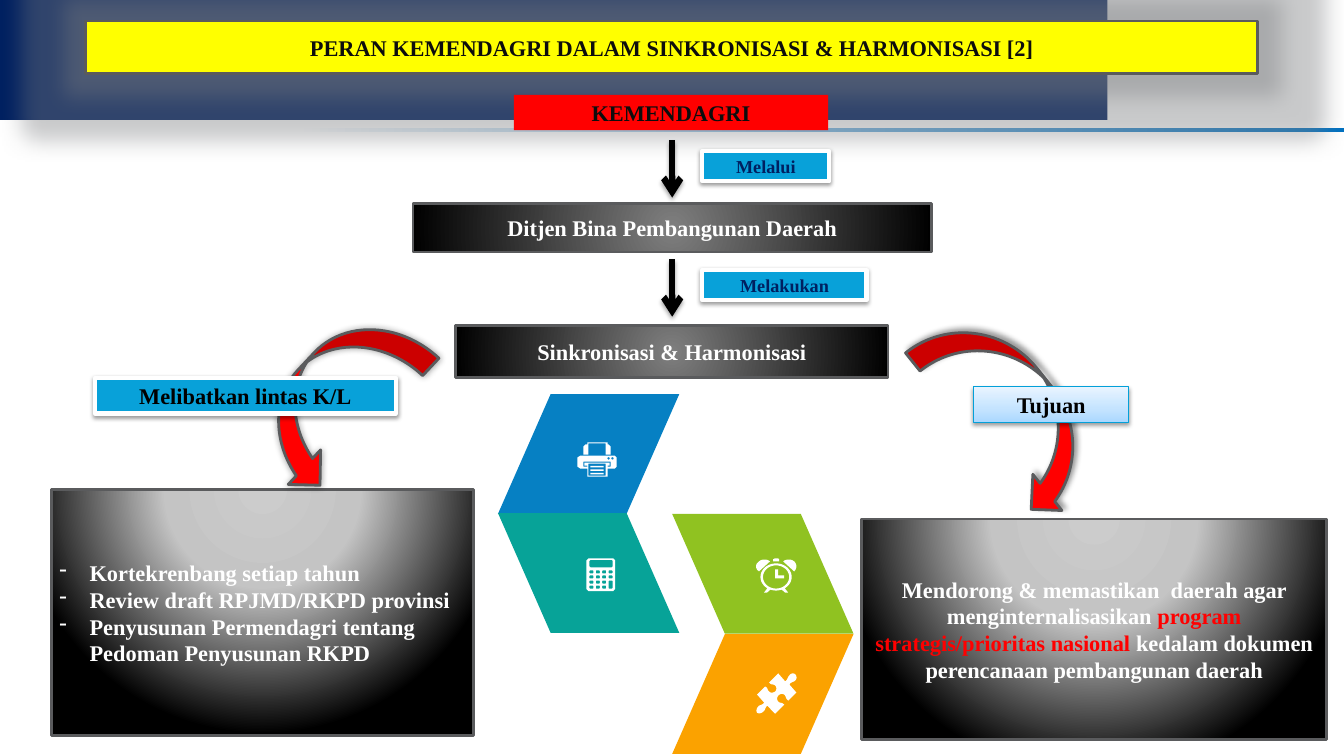
import math

import lxml.etree
import pptx
import pptx.dml.color
import pptx.enum.dml
import pptx.enum.shapes
import pptx.enum.text
import pptx.oxml
import pptx.oxml.ns
import pptx.util

Cm = pptx.util.Cm
Pt = pptx.util.Pt
RGBColor = pptx.dml.color.RGBColor
SHAPE = pptx.enum.shapes.MSO_SHAPE
ALIGN = pptx.enum.text.PP_ALIGN
ANCHOR = pptx.enum.text.MSO_ANCHOR
qn = pptx.oxml.ns.qn

WHITE = RGBColor(0xFF, 0xFF, 0xFF)
BLACK = RGBColor(0x00, 0x00, 0x00)
INK = RGBColor(0x0D, 0x0D, 0x0D)
NAVY = RGBColor(0x00, 0x20, 0x60)
BLUE = RGBColor(0x00, 0x70, 0xC0)
SKY = RGBColor(0x08, 0xA1, 0xD9)
SKY_EDGE = RGBColor(0x03, 0xA0, 0xD9)
YELLOW = RGBColor(0xFF, 0xFF, 0x00)
RED = RGBColor(0xFF, 0x00, 0x00)
EDGE = RGBColor(0x5A, 0x5B, 0x5D)
HALO = RGBColor(0x79, 0x7B, 0x7E)
GREY = RGBColor(0x7F, 0x7F, 0x7F)
SILVER = RGBColor(0xCC, 0xCC, 0xCC)
ASH = RGBColor(0xC4, 0xC4, 0xC4)
ICE = RGBColor(0xAB, 0xD8, 0xFF)
FROST = RGBColor(0xC3, 0xE3, 0xFF)
MIST = RGBColor(0xE8, 0xF4, 0xFF)
ORANGE = RGBColor(0xFB, 0xA2, 0x00)
GREEN = RGBColor(0x90, 0xC2, 0x21)
AZURE = RGBColor(0x06, 0x80, 0xC3)
TEAL = RGBColor(0x07, 0xA3, 0x98)

STRIP_FADE = ([(0, BLUE), (78, WHITE), (100, WHITE)], 180)
LABEL_FADE = ([(0, ICE), (35, FROST), (100, MIST)], 270)
BAR_FADE = ([(0, GREY), (100, BLACK)], (50, 50, 50, 50))
PANEL_FADE = ([(0, SILVER), (40, ASH), (100, BLACK)], (50, -80, 50, 180))
LABEL_SHADOW = (38, 3.1, 1.6, 90)
ICON_SCALE = Cm(2.54) / 10000


def element(tag, **values):
    node = pptx.oxml.parse_xml(
        f'<a:{tag} xmlns:a="http://schemas.openxmlformats.org/drawingml/2006/main"/>')
    for name, value in values.items():
        node.set(name, str(value))
    return node


def add_color(parent, color, alpha=100):
    node = element("srgbClr", val=color)
    node.append(element("alpha", val=alpha * 1000))
    parent.append(node)


def block(left, top, right, bottom, cut=0):
    return [(left + cut, top), (right - cut, top), (right, top + cut), (right, bottom - cut),
            (right - cut, bottom), (left + cut, bottom), (left, bottom - cut), (left, top + cut)]


def oval(x, y, radius_x, radius_y, count=40):
    turns = [2 * math.pi * step / count for step in range(count)]
    return [(x + radius_x * math.cos(turn), y + radius_y * math.sin(turn)) for turn in turns]


def smooth(steps):
    points = []
    for step in steps:
        if len(step) == 2:
            points.append(step)
            continue
        knots = [points[-1], step[:2], step[2:4], step[4:]]
        for t in (0.2, 0.4, 0.6, 0.8, 1):
            weights = [(1 - t) ** 3, 3 * t * (1 - t) ** 2, 3 * t * t * (1 - t), t ** 3]
            points.append(tuple(sum(w * knot[axis] for w, knot in zip(weights, knots))
                                for axis in (0, 1)))
    return points


class Board:
    font = "Times New Roman"

    def __init__(self, page):
        self.page = page

    def shape(self, kind, place, fill, line=None, width=2, shadow=None, glow=None,
              rotation=0, flip=False, slant=None):
        shape = self.page.shapes.add_shape(kind, *[Cm(value) for value in place])
        shape.rotation = rotation
        if slant:
            shape.adjustments[0] = slant
        if flip:
            shape._element.spPr.find(qn("a:xfrm")).set("flipV", "1")
        self.paint(shape, fill, line, width)
        effects = shape._element.spPr.find(qn("a:effectLst"))
        if shadow:
            self.shade(effects, *shadow)
        if glow:
            halo = element("glow", rad=Cm(glow))
            add_color(halo, HALO, 40)
            effects.append(halo)
        return shape

    def paint(self, shape, fill, line=None, width=2):
        shape.shadow.inherit = False
        if isinstance(fill, RGBColor):
            shape.fill.solid()
            shape.fill.fore_color.rgb = fill
        else:
            self.fade(shape, *fill)
        if line is None:
            shape.line.fill.background()
        else:
            shape.line.color.rgb = line
            shape.line.width = Pt(width)

    def fade(self, shape, stops, way):
        shape.fill.background()
        gradient, listing = element("gradFill", rotWithShape=1), element("gsLst")
        gradient.append(listing)
        for position, color in stops:
            stop = element("gs", pos=position * 1000)
            add_color(stop, color)
            listing.append(stop)
        if isinstance(way, tuple):
            route = element("path", path="circle")
            route.append(element("fillToRect", **{side: value * 1000
                                                  for side, value in zip("ltrb", way)}))
        else:
            route = element("lin", ang=way * 60000, scaled=0)
        gradient.append(route)
        properties = shape._element.spPr
        properties.replace(properties.find(qn("a:noFill")), gradient)

    def shade(self, effects, alpha, blur, distance, angle):
        shadow = element("outerShdw", blurRad=Pt(blur), dist=Pt(distance),
                         dir=angle * 60000, rotWithShape=0)
        add_color(shadow, BLACK, alpha)
        effects.append(shadow)

    def box(self, place, paras, fill, color, size=16, middle=True, bullet=False, **look):
        box = self.shape(SHAPE.RECTANGLE, place, fill, **look)
        frame = box.text_frame
        settings = {"word_wrap": True, "margin_left": Cm(0.2), "margin_right": Cm(0.2),
                    "margin_top": Cm(0.1), "margin_bottom": Cm(0.1),
                    "vertical_anchor": ANCHOR.MIDDLE if middle else ANCHOR.TOP}
        for name, value in settings.items():
            setattr(frame, name, value)
        for index, spans in enumerate(paras):
            para = frame.paragraphs[0] if index == 0 else frame.add_paragraph()
            para.alignment = ALIGN.LEFT if bullet else ALIGN.CENTER
            if bullet:
                properties = para._p.get_or_add_pPr()
                properties.set("marL", str(Cm(0.76)))
                properties.set("indent", str(-Cm(0.76)))
                properties.append(element("buChar", char="-"))
            for text, tint in spans:
                span = para.add_run()
                span.text = text
                for name, value in {"name": self.font, "size": Pt(size), "bold": True}.items():
                    setattr(span.font, name, value)
                span.font.color.rgb = tint or color

    def label(self, place, text, color, size=16, fill=SKY, line=WHITE, width=3):
        self.box(place, [[(text, None)]], fill, color, size, middle=False,
                 line=line, width=width, shadow=LABEL_SHADOW)

    def arrow(self, x, top, bottom):
        arrow = self.page.shapes.add_connector(
            pptx.enum.shapes.MSO_CONNECTOR.STRAIGHT, Cm(x), Cm(top), Cm(x), Cm(bottom))
        arrow.line.color.rgb = BLACK
        arrow.line.width = Pt(4.5)
        arrow.line._get_or_add_ln().append(element("tailEnd", type="arrow"))
        effects = element("effectLst")
        arrow._element.spPr.append(effects)
        self.shade(effects, 35, 3.1, 1.8, 90)

    def icon(self, left, top, contours):
        contours = [[(x * 100, y * 100) for x, y in contour] for contour in contours]
        builder = self.page.shapes.build_freeform(*contours[0][0], scale=ICON_SCALE)
        for index, contour in enumerate(contours):
            if index:
                builder.move_to(*contour[0])
            builder.add_line_segments(contour[1:], close=True)
        self.paint(builder.convert_to_shape(Cm(left), Cm(top)), WHITE)


CLOCK = [
    oval(20, 18.5, 15.5, 13.5), oval(20, 18.5, 13, 11.5),
    [(19, 11), (22, 11), (22, 17), (28, 17), (28, 20), (19, 20)],
    smooth([(14, 3), (3, 13), (-1, 10, -1, 6, 3, 3), (6, 0.5, 11, 0.5, 14, 3)]),
    smooth([(27, 3), (38, 13), (41, 10, 41, 6, 38, 3), (35, 0.5, 30, 0.5, 27, 3)]),
    [(17, 3), (17, 1), (19, 0), (22, 0), (23, 1), (23, 3)],
    [(11.5, 29.5), (8, 34), (11, 34), (14.5, 31)],
    [(28.5, 29.5), (32, 34), (29, 34), (25.5, 31)]]
CALCULATOR = [block(0, 0, 28.5, 32.5, 2), block(3, 1.5, 26, 9, 1)]
CALCULATOR += [block(3 + 6.3 * column, 12 + 5 * row, 7 + 6.3 * column, 15 + 5 * row, 0.5)
               for row in range(4) for column in range(4) if row < 2 or column < 3]
CALCULATOR.append(block(21.9, 22, 25.9, 30, 0.5))
PRINTER = [
    [(10, 0), (30, 0), (30, 2), (31, 2), (33, 4), (33, 12), (28, 12), (28, 1), (11, 1),
     (11, 12), (6, 12), (6, 4), (8, 2), (10, 2)],
    [(3, 13), (37, 13), (39, 15), (39, 24), (37, 26), (30, 26), (30, 34), (10, 34),
     (10, 26), (3, 26), (0, 24), (0, 15)],
    [(6, 19), (33, 19), (33, 24), (30, 24), (30, 23), (32, 23), (32, 20), (7, 20),
     (7, 23), (10, 23), (10, 24), (6, 24)],
    block(11, 21, 28, 33), oval(31, 15.8, 1.2, 1.2), oval(34.8, 15.8, 1.2, 1.2)]
PRINTER += [block(13, 23.3 + 3.5 * row, 26, 24.7 + 3.5 * row) for row in range(3)]
PUZZLE = [smooth([
    (38, 1), (39, 2, 40, 5, 38, 7), (36, 9, 34, 8, 32, 11), (39, 19), (31, 27),
    (28, 25, 29, 23, 27, 21), (25, 20, 23, 20, 21, 22), (20, 23, 19, 26, 21, 28),
    (23, 30, 24, 28, 27, 31), (18, 40), (10, 32), (7, 35, 9, 36, 6, 38),
    (4, 40, 1, 40, 0, 39), (-1, 38, -1, 35, 1, 33), (2, 31, 5, 32, 7, 29), (0, 21),
    (8, 13), (11, 14, 10, 17, 12, 18), (14, 20, 16, 19, 18, 18), (19, 17, 20, 14, 18, 12),
    (15, 10, 14, 12, 12, 9), (21, 0), (28, 8), (31, 5, 30, 4, 32, 2), (34, -1, 37, 0, 38, 1)])]


def main():
    deck = pptx.Presentation()
    deck.slide_width, deck.slide_height = Cm(33.87), Cm(19.05)
    board = Board(deck.slides.add_slide(deck.slide_layouts[6]))

    board.shape(SHAPE.FLOWCHART_PROCESS, (0, 3.23, 33.87, 0.1), STRIP_FADE)
    board.shape(SHAPE.RECTANGLE, (0, 0, 27.91, 3.02), NAVY)
    board.box((2.16, 0.53, 29.54, 1.32),
              [[("PERAN KEMENDAGRI DALAM SINKRONISASI & HARMONISASI [2]", None)]],
              YELLOW, INK, line=EDGE, glow=1.1)
    board.box((12.95, 2.39, 7.92, 0.89), [[("KEMENDAGRI", None)]], RED, INK, middle=False)
    for place, text in [((11.48, 8.2, 10.9, 1.32), "Sinkronisasi & Harmonisasi"),
                        ((10.41, 5.13, 13.06, 1.22), "Ditjen Bina Pembangunan Daerah")]:
        board.box(place, [[(text, None)]], BAR_FADE, WHITE, line=EDGE)
    duties = ["Kortekrenbang setiap tahun", "Review draft RPJMD/RKPD provinsi",
              "Penyusunan Permendagri tentang Pedoman Penyusunan RKPD"]
    board.box((1.3, 12.34, 10.64, 6.2), [[(duty, None)] for duty in duties],
              PANEL_FADE, WHITE, bullet=True, line=EDGE)
    board.box((21.72, 13.08, 11.71, 5.56),
              [[("Mendorong & memastikan  daerah agar menginternalisasikan ", None),
                ("program strategis/prioritas nasional ", RED),
                ("kedalam dokumen perencanaan pembangunan daerah", None)]],
              PANEL_FADE, WHITE, line=EDGE)
    for top, width, text in [(3.53, 3.2, "Melalui"), (6.53, 4.14, "Melakukan")]:
        board.arrow(16.94, top, top + 1.45)
        board.label((17.7, top + 0.28, width, 0.76), text, NAVY, 13)

    for left, top, color, flip in [(16.94, 15.98, ORANGE, False), (16.94, 12.95, GREEN, True),
                                   (12.55, 9.93, AZURE, False), (12.55, 12.93, TEAL, True)]:
        board.shape(SHAPE.PARALLELOGRAM, (left, top, 4.57, 3.02), color, flip=flip, slant=0.44)
    for left, top, contours in [(19.05, 14.07, CLOCK), (14.78, 14.07, CALCULATOR),
                                (14.55, 11.15, PRINTER), (19.08, 16.97, PUZZLE)]:
        board.icon(left, top, contours)

    board.shape(SHAPE.CURVED_RIGHT_ARROW, (7.29, 7.54, 2.39, 4.98), RED, EDGE,
                shadow=(40, 5, 0, 0), rotation=43.1)
    board.label((2.39, 9.53, 7.59, 0.89), "Melibatkan lintas K/L", BLACK)
    board.shape(SHAPE.CURVED_LEFT_ARROW, (24.33, 7.54, 2.34, 5.64), RED, EDGE,
                shadow=(40, 4, 3, 315), rotation=321.2)
    board.label((24.54, 9.75, 3.91, 0.89), "Tujuan", BLACK, fill=LABEL_FADE,
                line=SKY_EDGE, width=0.75)
    deck.save("out.pptx")


if __name__ == "__main__":
    main()
